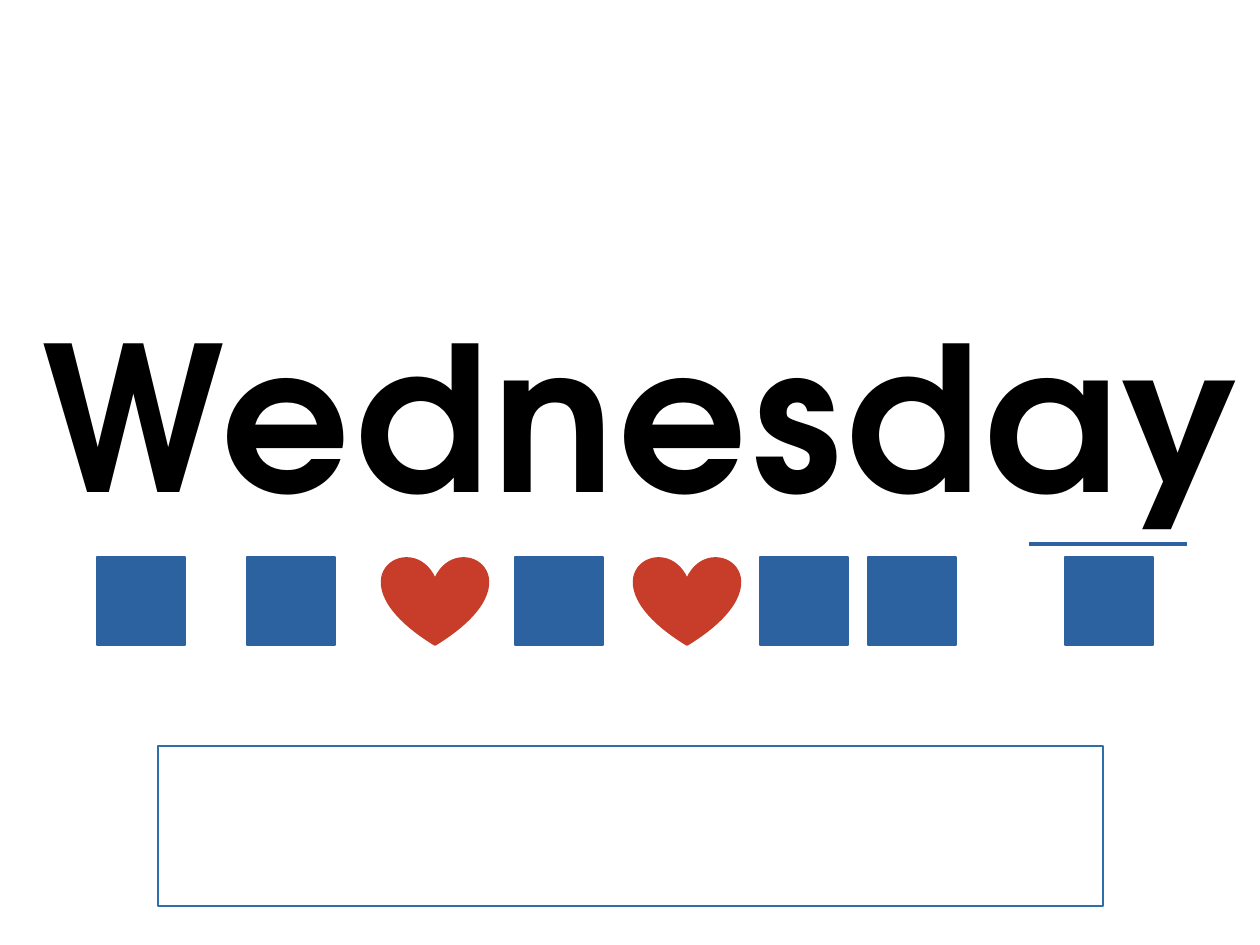
import dataclasses

import pptx
import pptx.dml.color
import pptx.enum.shapes
import pptx.enum.text
import pptx.oxml.ns
import pptx.util
from lxml import etree

SHAPE = pptx.enum.shapes.MSO_SHAPE
PX_PER_INCH = 126


@dataclasses.dataclass(frozen=True)
class Theme:
    font: str = "TeX Gyre Adventor"
    text: str = "000000"
    square: str = "2C629F"
    heart: str = "C73D29"
    panel: str = "FFFFFF"
    panel_line: str = "2F6FA9"
    word_size: int = 115
    outline: int = 1
    rule: int = 2


THEME = Theme()


def px(n):
    return pptx.util.Emu(round(n * 914400 / PX_PER_INCH))


def rgb(value):
    return pptx.dml.color.RGBColor.from_string(value)


def set_text(tf, text, *, size, color, bold=False, spacing=0):
    """Write one centred line of text, with letter spacing in points."""
    p = tf.paragraphs[0]
    p.alignment = pptx.enum.text.PP_ALIGN.CENTER
    r = p.add_run()
    r.text = text
    r.font.name = THEME.font
    r.font.size = pptx.util.Pt(size)
    r.font.bold = bold
    r.font.color.rgb = rgb(color)
    r.font._element.set("spc", str(spacing * 100))


def add_word(s, text, x, y, w, h):
    sp = s.shapes.title
    sp.left, sp.top, sp.width, sp.height = px(x), px(y), px(w), px(h)
    tf = sp.text_frame
    tf.word_wrap = True
    tf.auto_size = pptx.enum.text.MSO_AUTO_SIZE.NONE
    tf.vertical_anchor = pptx.enum.text.MSO_ANCHOR.TOP
    set_text(tf, text, size=THEME.word_size, color=THEME.text,
             bold=True, spacing=3)


def add_box(s, kind, x, y, w, h, fill, line):
    sp = s.shapes.add_shape(kind, px(x), px(y), px(w), px(h))
    sp.shadow.inherit = False
    sp.fill.solid()
    sp.fill.fore_color.rgb = rgb(fill)
    sp.line.color.rgb = rgb(line)
    sp.line.width = pptx.util.Pt(THEME.outline)


def add_rule(s, x1, x2, y):
    c = s.shapes.add_connector(pptx.enum.shapes.MSO_CONNECTOR.STRAIGHT,
                               px(x1), px(y), px(x2), px(y))
    c.line.color.rgb = rgb(THEME.square)
    c.line.width = pptx.util.Pt(THEME.rule)
    etree.SubElement(c._element.spPr, pptx.oxml.ns.qn("a:effectLst"))


def main():
    prs = pptx.Presentation()
    prs.slide_width, prs.slide_height = px(1260), px(945)
    s = prs.slides.add_slide(prs.slide_layouts[5])

    # The word
    add_word(s, "Wednesday", 11, 285, 1260, 257)

    # Sound markers under the letters
    marker_top, marker_height = 557, 88
    for x in (97, 247, 515, 760, 868, 1065):
        add_box(s, SHAPE.RECTANGLE, x, marker_top, 88, marker_height,
                THEME.square, THEME.square)
    for x in (382, 634):
        add_box(s, SHAPE.HEART, x, marker_top, 106, marker_height,
                THEME.heart, THEME.heart)

    # Line joining the last two letters
    add_rule(s, 1029, 1187, 544)

    # Empty answer panel
    add_box(s, SHAPE.RECTANGLE, 158, 746, 945, 160,
            THEME.panel, THEME.panel_line)

    prs.save("out.pptx")


if __name__ == "__main__":
    main()
